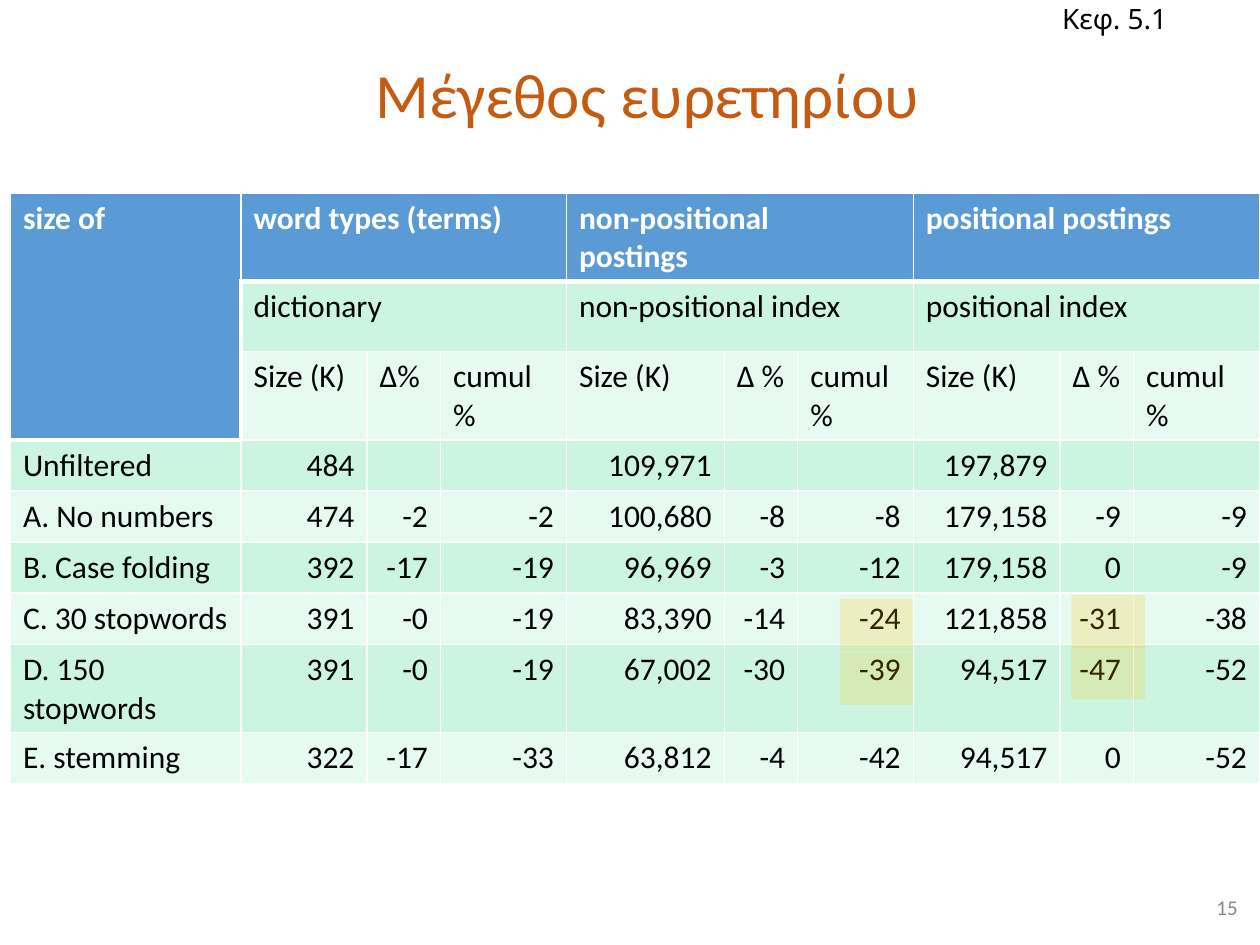
from dataclasses import dataclass

from lxml.etree import SubElement
from pptx import Presentation
from pptx.dml.color import RGBColor as Rgb
from pptx.enum.shapes import MSO_SHAPE as Shape
from pptx.enum.text import MSO_ANCHOR as Anchor, MSO_AUTO_SIZE as AutoSize, PP_ALIGN as Align
from pptx.oxml.ns import qn
from pptx.util import Cm, Pt


@dataclass(frozen=True)
class Theme:
    title: Rgb = Rgb(0xC5, 0x5A, 0x11)
    text: Rgb = Rgb(0, 0, 0)
    page: Rgb = Rgb(0x89, 0x89, 0x89)
    white: Rgb = Rgb(0xFF, 0xFF, 0xFF)
    header: Rgb = Rgb(0x5B, 0x9B, 0xD5)
    dark_band: Rgb = Rgb(0xCB, 0xF5, 0xE1)
    light_band: Rgb = Rgb(0xE7, 0xFA, 0xF1)
    highlight: Rgb = Rgb(0xFF, 0xC0, 0x00)
    highlight_alpha: int = 20
    font: str = "Calibri"
    chapter_font: str = "Noto Sans"
    title_size: Pt = Pt(36)
    table_size: Pt = Pt(18)
    chapter_size: Pt = Pt(16)
    page_size: Pt = Pt(12)
    thin: Pt = Pt(1)
    thick: Pt = Pt(3)


THEME = Theme()
COLUMN_WIDTHS = [4.65, 2.54, 1.48, 2.54, 3.18, 1.48, 2.33, 2.96, 1.48, 2.54]
ROW_HEIGHTS = [1.7, 1.42, 1.09] + [1.03] * 6
GROUPS = [
    ("word types (terms)", "dictionary", "∆%"),
    ("non-positional\npostings", "non-positional index", "∆ %"),
    ("positional postings", "positional index", "∆ %"),
]
MEASURES = [
    ["Unfiltered", "484", "", "", "109,971", "", "", "197,879", "", ""],
    ["Α. No numbers", "474", "-2", "-2", "100,680", "-8", "-8", "179,158", "-9", "-9"],
    ["Β. Case folding", "392", "-17", "-19", "96,969", "-3", "-12", "179,158", "0", "-9"],
    ["C. 30 stopwords", "391", "-0", "-19", "83,390", "-14", "-24", "121,858", "-31", "-38"],
    ["D. 150 stopwords", "391", "-0", "-19", "67,002", "-30", "-39", "94,517", "-47", "-52"],
    ["E. stemming", "322", "-17", "-33", "63,812", "-4", "-42", "94,517", "0", "-52"],
]
HIGHLIGHTS = [(21.6, 12), (21.6, 13.04), (16.93, 12.07), (16.93, 13.15)]


def apply_format(target, values):
    for name, value in values.items():
        setattr(target, name, value)


def write_text(frame, text, color, font, paragraph=None):
    frame.text = text
    for line in frame.paragraphs:
        apply_format(line, paragraph or {})
        for run in line.runs:
            apply_format(run.font, font)
            run.font.color.rgb = color


def add_label(slide, box, text, color, font, frame, paragraph):
    label = slide.shapes.add_textbox(*map(Cm, box)).text_frame
    write_text(label, text, color, font, paragraph)
    apply_format(label, {"vertical_anchor": Anchor.MIDDLE, "word_wrap": True, **frame})


def set_borders(cell, widths):
    properties = cell._tc.get_or_add_tcPr()
    for side, width in widths.items():
        line = SubElement(properties, qn(f"a:ln{side}"), w=str(width))
        SubElement(SubElement(line, qn("a:solidFill")), qn("a:srgbClr"), val=str(THEME.white))


def border_widths(row, column):
    def choose(heavy):
        return THEME.thick if heavy else THEME.thin

    return {
        "L": choose(column == 1 and row in (1, 2)),
        "R": choose(column == 0 and row in (1, 2)),
        "T": choose(row == 1 and column > 0 or row == 3 and column == 0),
        "B": choose(row == 0 and column > 0 or row == 2 and column == 0),
    }


def table_rows():
    titles, indexes, units = ["size of"], [""], [""]
    for title, index, delta in GROUPS:
        titles += [title, "", ""]
        indexes += [index, "", ""]
        units += ["Size (K)", delta, "cumul %"]
    return [titles, indexes, units, *MEASURES]


def fill_cell(cell, row, column, text):
    is_header = row == 0 or column == 0 and row < 3
    band = THEME.dark_band if row % 2 else THEME.light_band
    set_borders(cell, border_widths(row, column))
    cell.fill.solid()
    cell.fill.fore_color.rgb = THEME.header if is_header else band
    write_text(
        cell.text_frame,
        text,
        THEME.white if is_header else THEME.text,
        {"name": THEME.font, "size": THEME.table_size, "bold": is_header},
        {"alignment": Align.RIGHT if row > 2 and column else Align.LEFT},
    )


def add_index_table(slide):
    rows = table_rows()
    place = map(Cm, (0.21, 3.89, sum(COLUMN_WIDTHS), sum(ROW_HEIGHTS)))
    table = slide.shapes.add_table(len(rows), len(COLUMN_WIDTHS), *place).table
    for column, width in zip(table.columns, COLUMN_WIDTHS):
        column.width = Cm(width)
    for row, height in zip(table.rows, ROW_HEIGHTS):
        row.height = Cm(height)
    for row, texts in enumerate(rows):
        for column, text in enumerate(texts):
            fill_cell(table.cell(row, column), row, column, text)
    table.cell(0, 0).merge(table.cell(2, 0))
    for row in (0, 1):
        for first in (1, 4, 7):
            table.cell(row, first).merge(table.cell(row, first + 2))


def add_highlight(slide, left, top):
    mark = slide.shapes.add_shape(Shape.RECTANGLE, Cm(left), Cm(top), Cm(1.48), Cm(1.06))
    mark.shadow.inherit = False
    mark.line.fill.background()
    mark.fill.solid()
    mark.fill.fore_color.rgb = THEME.highlight
    color = mark.fill._xPr.find(qn("a:solidFill"))[0]
    SubElement(color, qn("a:alpha"), val=str(THEME.highlight_alpha * 1000))


def main():
    deck = Presentation()
    apply_format(deck, {"slide_width": Cm(25.4), "slide_height": Cm(19.05)})
    slide = deck.slides.add_slide(deck.slide_layouts[6])
    add_label(
        slide, (1.4, 0.61, 23.29, 2.74), "Μέγεθος ευρετηρίου", THEME.title,
        {"name": THEME.font, "size": THEME.title_size}, {},
        {"alignment": Align.CENTER, "line_spacing": 0.9},
    )
    add_index_table(slide)
    add_label(
        slide, (19.48, 17.78, 5.72, 1.02), "15", THEME.page,
        {"name": THEME.font, "size": THEME.page_size}, {}, {"alignment": Align.RIGHT},
    )
    add_label(
        slide, (21.16, -0.1, 2.79, 0.94), "Κεφ. 5.1", THEME.text,
        {"name": THEME.chapter_font, "size": THEME.chapter_size},
        {"word_wrap": False, "auto_size": AutoSize.SHAPE_TO_FIT_TEXT}, {"alignment": Align.LEFT},
    )
    for left, top in HIGHLIGHTS:
        add_highlight(slide, left, top)
    deck.save("out.pptx")


if __name__ == "__main__":
    main()
